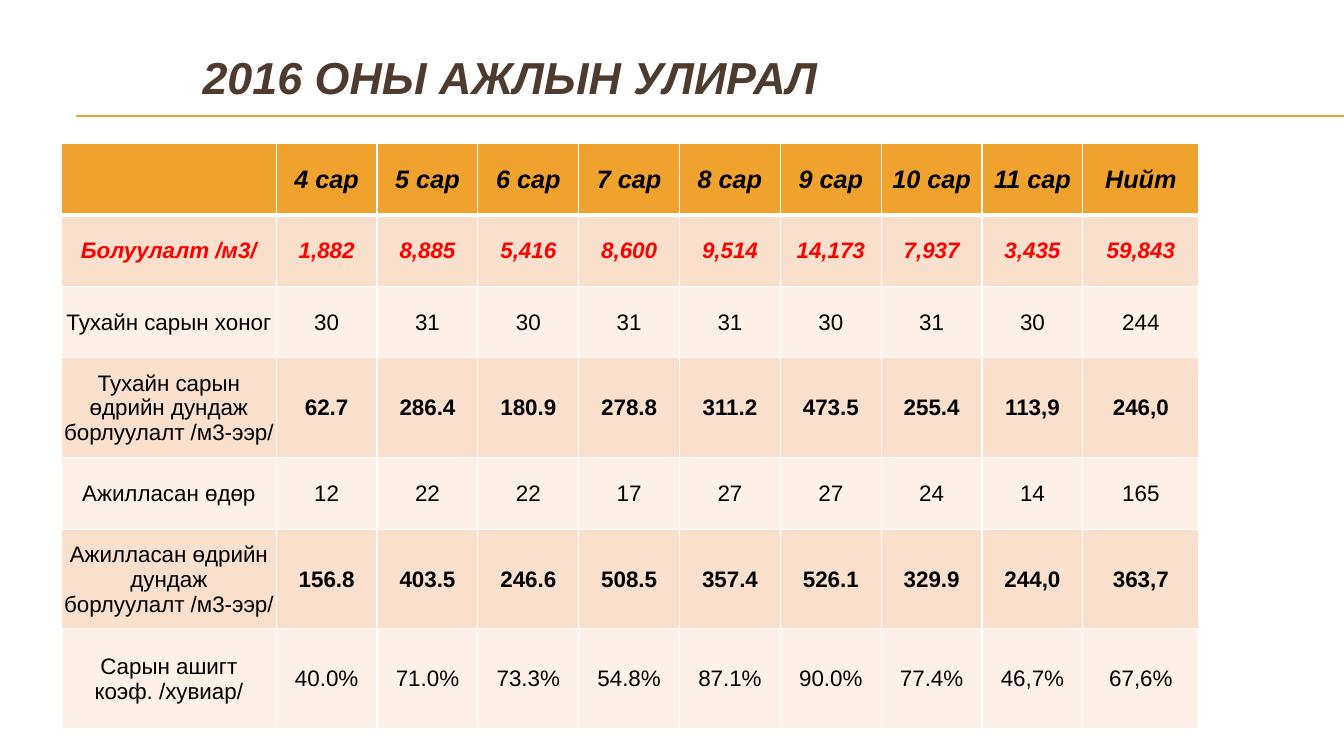
from dataclasses import dataclass

from lxml.etree import SubElement as Sub
from pptx import Presentation
from pptx.dml.color import RGBColor as Rgb
from pptx.enum.shapes import MSO_CONNECTOR as Connector
from pptx.enum.text import MSO_ANCHOR as Anchor, PP_ALIGN as Align
from pptx.oxml.ns import qn
from pptx.util import Pt

PX = 9144


@dataclass(frozen=True)
class Theme:
    font: str = "Arial"
    amber: str = "F0A22E"
    brown: str = "4E3B30"
    peach: str = "F9E0CD"
    cream: str = "FCF0E8"
    white: str = "FFFFFF"
    black: str = "000000"
    red: str = "FF0000"
    title_size: int = 32
    header_size: int = 18
    body_size: int = 16
    rule_width: float = 0.75
    border_width: int = 1
    header_border_width: int = 3


THEME = Theme()
COLUMN_WIDTHS = [213] + [100] * 8 + [115]
ROW_HEIGHTS = [71, 71, 71, 99, 71, 99, 99]
SEASON = [
    ["", *(f"{month} сар" for month in range(4, 12)), "Нийт"],
    ["Болуулалт /м3/", "1,882", "8,885", "5,416", "8,600", "9,514", "14,173",
     "7,937", "3,435", "59,843"],
    ["Тухайн сарын хоног", "30", "31", "30", "31", "31", "30", "31", "30", "244"],
    ["Тухайн сарын өдрийн дундаж борлуулалт /м3-ээр/", "62.7", "286.4", "180.9",
     "278.8", "311.2", "473.5", "255.4", "113,9", "246,0"],
    ["Ажилласан өдөр", "12", "22", "22", "17", "27", "27", "24", "14", "165"],
    ["Ажилласан өдрийн дундаж борлуулалт /м3-ээр/", "156.8", "403.5", "246.6",
     "508.5", "357.4", "526.1", "329.9", "244,0", "363,7"],
    ["Сарын ашигт коэф. /хувиар/", "40.0%", "71.0%", "73.3%", "54.8%", "87.1%",
     "90.0%", "77.4%", "46,7%", "67,6%"],
]
AVERAGE_ROWS = (3, 5)


def px(*lengths):
    return [length * PX for length in lengths]


def apply(target, values):
    for name, value in values.items():
        setattr(target, name, value)


def write(frame, wording, size, color, bold=False, italic=False):
    paragraph = frame.paragraphs[0]
    paragraph.alignment = Align.CENTER
    run = paragraph.add_run()
    run.text = wording
    apply(run.font, {"name": THEME.font, "size": Pt(size), "bold": bold, "italic": italic})
    run.font.color.rgb = Rgb.from_string(color)


def add_rule(slide, y):
    rule = slide.shapes.add_connector(Connector.STRAIGHT, *px(75, y, 1333, y))
    rule.line.color.rgb = Rgb.from_string(THEME.amber)
    rule.line.width = Pt(THEME.rule_width)
    Sub(rule._element.spPr, qn("a:effectLst"))


def add_title(slide, wording):
    frame = slide.shapes.add_textbox(*px(42, 42, 928, 67)).text_frame
    apply(frame, {"word_wrap": True, "vertical_anchor": Anchor.MIDDLE})
    write(frame, wording, THEME.title_size, THEME.brown, bold=True, italic=True)


def add_borders(cell, widths):
    properties = cell._tc.get_or_add_tcPr()
    for side, width in widths.items():
        border = Sub(properties, qn(f"a:ln{side}"), w=str(Pt(width)))
        fill = Sub(border, qn("a:solidFill"))
        Sub(fill, qn("a:srgbClr"), val=THEME.white)


def row_look(row):
    if row == 0:
        return THEME.amber, {"size": THEME.header_size, "color": THEME.black,
                             "bold": True, "italic": True}
    fill = THEME.peach if row % 2 else THEME.cream
    sales = row == 1
    return fill, {"size": THEME.body_size, "color": THEME.red if sales else THEME.black,
                  "bold": sales, "italic": sales}


def fill_cell(cell, row, column, wording):
    fill, text_style = row_look(row)
    widths = dict.fromkeys("LRTB" if row == 0 else "LRB", THEME.border_width)
    if row == 0:
        widths["B"] = THEME.header_border_width
    add_borders(cell, widths)
    cell.fill.solid()
    cell.fill.fore_color.rgb = Rgb.from_string(fill)
    apply(cell, {"margin_left": PX, "margin_right": PX, "margin_top": PX,
                 "margin_bottom": 0, "vertical_anchor": Anchor.MIDDLE})
    if row in AVERAGE_ROWS and column > 0:
        text_style["bold"] = True
    if wording:
        write(cell.text_frame, wording, **text_style)


def add_season_table(slide):
    season = slide.shapes.add_table(
        len(ROW_HEIGHTS), len(COLUMN_WIDTHS),
        *px(61, 142, sum(COLUMN_WIDTHS), sum(ROW_HEIGHTS))).table
    apply(season, {"first_row": False, "horz_banding": False})
    for column, width in zip(season.columns, px(*COLUMN_WIDTHS)):
        column.width = width
    for row, height in zip(season.rows, px(*ROW_HEIGHTS)):
        row.height = height
    for row, entries in enumerate(SEASON):
        for column, wording in enumerate(entries):
            fill_cell(season.cell(row, column), row, column, wording)


def main():
    deck = Presentation()
    deck.slide_width, deck.slide_height = px(1333, 750)
    slide = deck.slides.add_slide(deck.slide_layouts[6])
    for y in (115, 116):
        add_rule(slide, y)
    add_season_table(slide)
    add_title(slide, "2016 ОНЫ АЖЛЫН УЛИРАЛ")
    deck.save("out.pptx")


if __name__ == "__main__":
    main()
